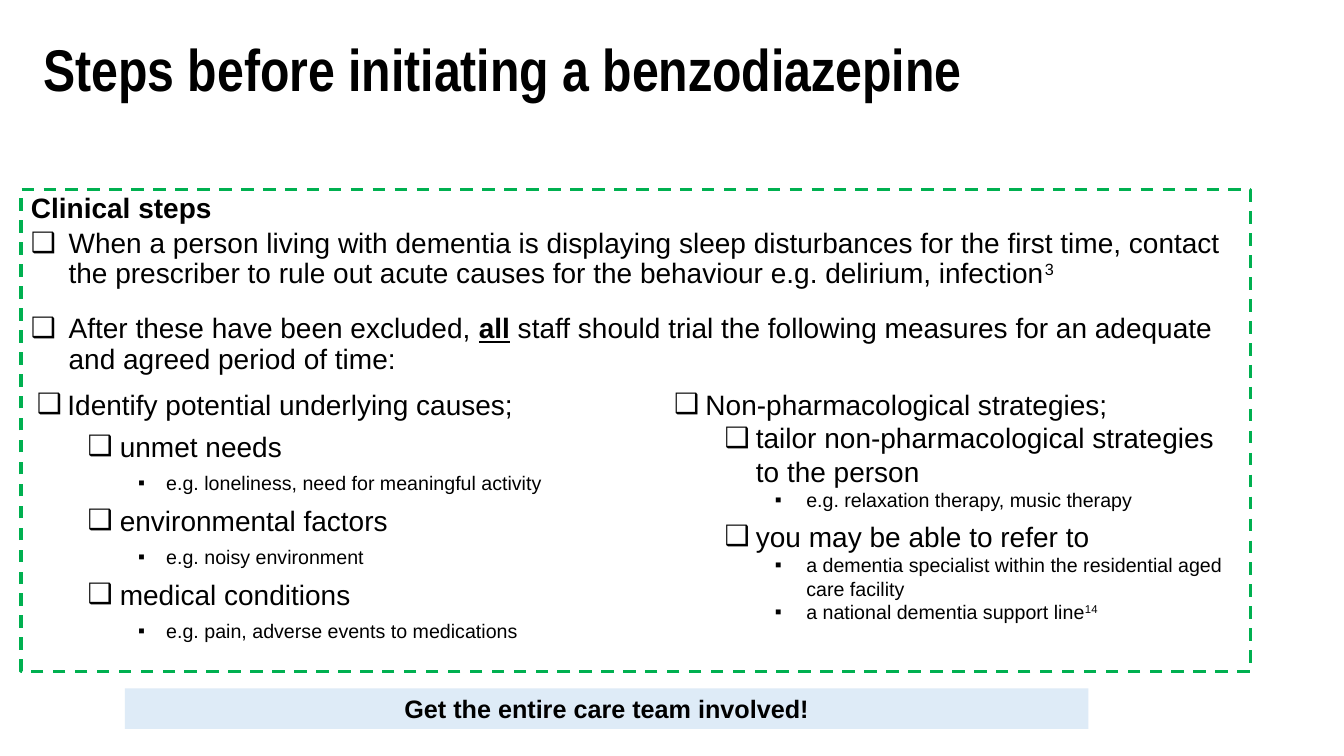
from lxml import etree
from pptx import Presentation
from pptx.dml.color import RGBColor
from pptx.enum.dml import MSO_LINE
from pptx.enum.shapes import MSO_SHAPE
from pptx.enum.text import MSO_ANCHOR, PP_ALIGN
from pptx.oxml.ns import qn
from pptx.util import Cm, Pt

DASH = MSO_LINE.DASH
RECTANGLE = MSO_SHAPE.RECTANGLE
TOP, MIDDLE = MSO_ANCHOR.TOP, MSO_ANCHOR.MIDDLE
LEFT, CENTER = PP_ALIGN.LEFT, PP_ALIGN.CENTER
BLACK, GREEN, PALE_BLUE = "000000", "00B050", "DEEBF7"
BOX, SQUARE = "❑", "▪"

CAUSES = [
    (0, "Identify potential underlying causes;"),
    (1, "unmet needs"),
    (2, "e.g. loneliness, need for meaningful activity"),
    (1, "environmental factors"),
    (2, "e.g. noisy environment"),
    (1, "medical conditions"),
    (2, "e.g. pain, adverse events to medications"),
]
STRATEGIES = [
    (0, "Non-pharmacological strategies;"),
    (1, "tailor non-pharmacological strategies to the person"),
    (2, "e.g. relaxation therapy, music therapy"),
    (1, "you may be able to refer to"),
    (2, "a dementia specialist within the residential aged care facility"),
    (2, "a national dementia support line", "14"),
]
CAUSE_INDENTS = [(1.45, 0.77), (2.77, 0.81), (3.94, 0.71)]
STRATEGY_INDENTS = [(0.79, 0.79), (2.06, 0.79), (3.33, 0.79)]


def color(hex_string):
    """Return the colour for a hex string."""
    return RGBColor.from_string(hex_string)


def set_font(paragraph, size, bold=False, name="Arial"):
    """Set the font shared by all runs of a paragraph."""
    font = paragraph.font
    font.name, font.size, font.bold = name, Pt(size), bold
    font.color.rgb = color(BLACK)


def set_bullet(paragraph, character, margin, hanging):
    """Give a paragraph a bullet with a hanging indent in centimetres."""
    properties = paragraph._p.get_or_add_pPr()
    properties.set("marL", str(Cm(margin)))
    properties.set("indent", str(-Cm(hanging)))
    etree.SubElement(properties, qn("a:buFont")).set("typeface", "Arial")
    etree.SubElement(properties, qn("a:buChar")).set("char", character)


def add_superscript(paragraph, text):
    """Append a raised reference number."""
    run = paragraph.add_run()
    run.text = text
    run._r.get_or_add_rPr().set("baseline", "30000")


def next_paragraph(text_frame):
    """Return the first paragraph while it is empty, otherwise a new one."""
    first = text_frame.paragraphs[0]
    return first if not first.runs else text_frame.add_paragraph()


def add_rectangle(slide, left, top, width, height, anchor):
    """Add a plain rectangle without shadow, fill or line."""
    shape = slide.shapes.add_shape(RECTANGLE, Cm(left), Cm(top), Cm(width), Cm(height))
    shape.shadow.inherit = False
    shape.fill.background()
    shape.line.fill.background()
    shape.text_frame.word_wrap = True
    shape.text_frame.vertical_anchor = anchor
    return shape


def set_title(slide, text):
    """Place and format the title placeholder."""
    title = slide.shapes.title
    title.left, title.top, title.width, title.height = Cm(0.84), Cm(0.91), Cm(29.92), Cm(2.06)
    title.text_frame.vertical_anchor = TOP
    title.text_frame.word_wrap = True
    paragraph = title.text_frame.paragraphs[0]
    paragraph.add_run().text = text
    paragraph.alignment = LEFT
    paragraph.line_spacing = 0.9
    set_font(paragraph, 42, True, "Arial Narrow")


def add_clinical_steps(slide):
    """Add the dashed panel with the heading and the two main steps."""
    panel = add_rectangle(slide, 0.53, 4.78, 30.99, 12.14, TOP)
    panel.line.color.rgb = color(GREEN)
    panel.line.width = Pt(2.25)
    panel.line.dash_style = DASH
    frame = panel.text_frame
    heading = next_paragraph(frame)
    heading.add_run().text = "Clinical steps"
    heading.alignment, heading.line_spacing = LEFT, 0.9
    set_font(heading, 20, True)

    steps = []
    for space_before in (3, 15):
        step = frame.add_paragraph()
        step.alignment, step.line_spacing = LEFT, 0.9
        step.space_before, step.space_after = Pt(space_before), Pt(3)
        set_bullet(step, BOX, 0.95, 0.95)
        set_font(step, 20)
        steps.append(step)
    contact, trial = steps
    contact.add_run().text = (
        "When a person living with dementia is displaying sleep disturbances for the first time, "
        "contact the prescriber to rule out acute causes for the behaviour e.g. delirium, infection"
    )
    add_superscript(contact, "3")
    trial.add_run().text = "After these have been excluded, "
    everyone = trial.add_run()
    everyone.text = "all"
    everyone.font.bold = everyone.font.underline = True
    trial.add_run().text = (
        " staff should trial the following measures for an adequate and agreed period of time:"
    )


def add_checklist(slide, left, width, height, items, indents, spacing=0, extra_before=None):
    """Add a three-level checklist, with extra space before chosen items."""
    box = slide.shapes.add_textbox(Cm(left), Cm(9.63), Cm(width), Cm(height))
    frame = box.text_frame
    frame.word_wrap = True
    for index, (level, text, *references) in enumerate(items):
        paragraph = next_paragraph(frame)
        paragraph.add_run().text = text
        for reference in references:
            add_superscript(paragraph, reference)
        paragraph.level = level
        before = spacing + (extra_before or {}).get(index, 0)
        paragraph.space_before = Pt(before if index else 0)
        paragraph.space_after = Pt(spacing)
        set_bullet(paragraph, SQUARE if level == 2 else BOX, *indents[level])
        set_font(paragraph, 14 if level == 2 else 20)


def add_banner(slide, text):
    """Add the closing call to action."""
    banner = add_rectangle(slide, 3.15, 17.35, 24.28, 1.02, MIDDLE)
    banner.fill.solid()
    banner.fill.fore_color.rgb = color(PALE_BLUE)
    paragraph = banner.text_frame.paragraphs[0]
    paragraph.add_run().text = text
    paragraph.alignment = CENTER
    set_font(paragraph, 18, True)


def main():
    """Build the slide and save it."""
    presentation = Presentation()
    presentation.slide_width, presentation.slide_height = Cm(33.87), Cm(19.05)
    slide = presentation.slides.add_slide(presentation.slide_layouts[5])
    set_title(slide, "Steps before initiating a benzodiazepine")
    add_clinical_steps(slide)
    add_banner(slide, "Get the entire care team involved!")
    add_checklist(slide, 16.74, 14.78, 6.27, STRATEGIES, STRATEGY_INDENTS, extra_before={3: 5.75})
    add_checklist(slide, 0, 16.28, 6.76, CAUSES, CAUSE_INDENTS, spacing=3)
    presentation.save("out.pptx")


if __name__ == "__main__":
    main()
